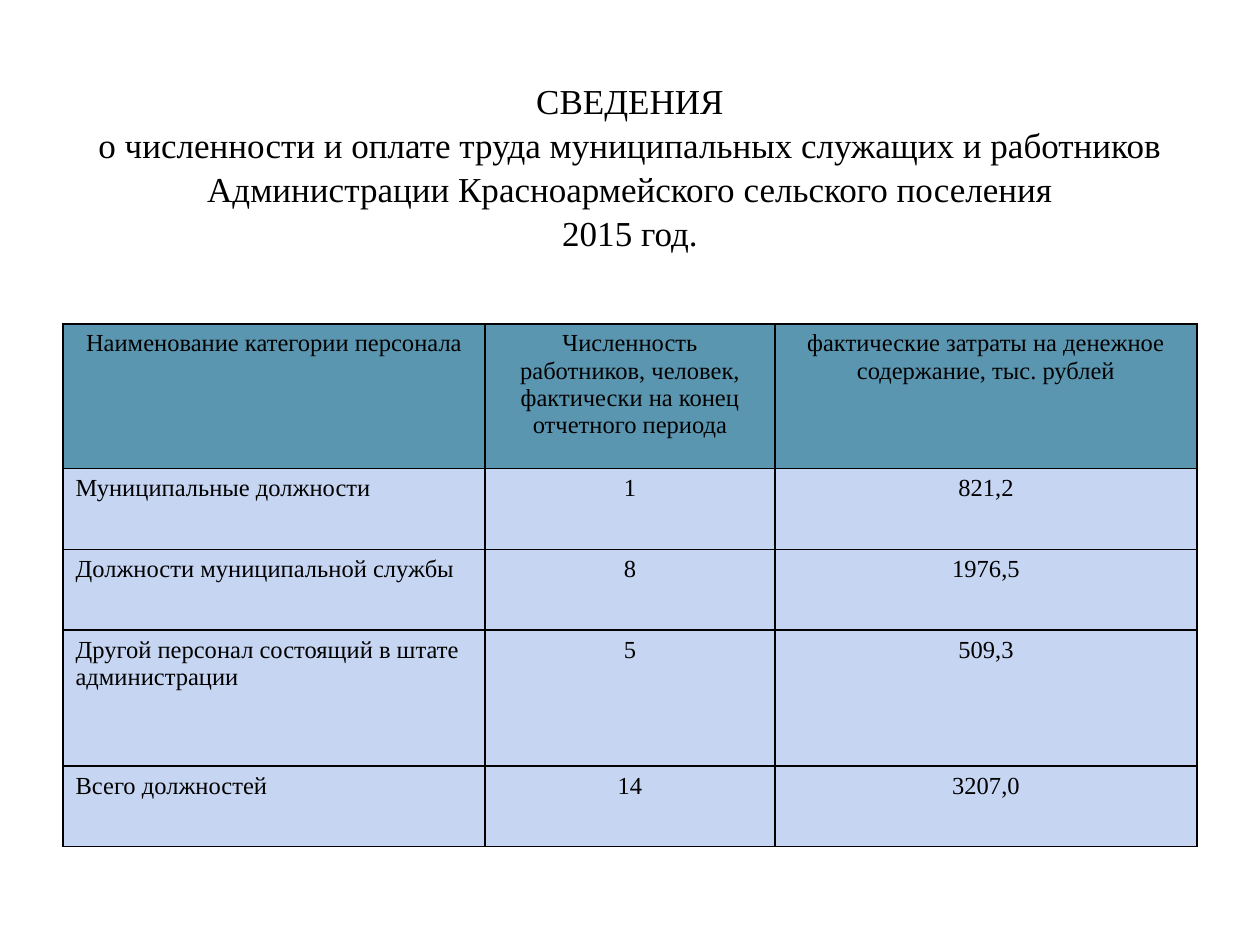
from dataclasses import dataclass

from lxml import etree
from pptx import Presentation
from pptx.dml.color import RGBColor
from pptx.enum import text
from pptx.oxml import ns
from pptx.util import Inches, Pt

FONT = "Times New Roman"
BLACK, HEADER, BODY = "000000", "5B96B1", "C6D5F2"
LEFT, CENTER = text.PP_ALIGN.LEFT, text.PP_ALIGN.CENTER
WIDTH, HEIGHT = 10, 7.5
MARGIN = 0.05 * WIDTH
COLUMNS = (3.35, 2.3, 3.35)


@dataclass
class Row:
    height: float
    cells: tuple[str, ...]
    fill: str = BODY
    first_align: text.PP_ALIGN = LEFT


ROWS = (
    Row(1.15, ("Наименование категории персонала",
               "Численность работников, человек,\nфактически на конец отчетного периода",
               "фактические затраты на денежное содержание, тыс. рублей"), HEADER, CENTER),
    Row(0.64, ("Муниципальные должности", "1", "821,2")),
    Row(0.64, ("Должности муниципальной службы", "8", "1976,5")),
    Row(1.08, ("Другой персонал состоящий в штате администрации", "5", "509,3")),
    Row(0.64, ("Всего должностей", "14", "3207,0")),
)


def color(value: str) -> RGBColor:
    return RGBColor.from_string(value)


def write(tf, content: str, size: float, align) -> None:
    tf.text = content
    for p in tf.paragraphs:
        p.alignment = align
        for r in p.runs:
            r.font.name = FONT
            r.font.size = Pt(size)
            r.font.color.rgb = color(BLACK)


def add_borders(cell) -> None:
    tc_pr = cell._tc.get_or_add_tcPr()
    for side in ("lnL", "lnR", "lnT", "lnB"):
        ln = etree.SubElement(tc_pr, ns.qn(f"a:{side}"), w=str(Pt(1)))
        fill = etree.SubElement(ln, ns.qn("a:solidFill"))
        etree.SubElement(fill, ns.qn("a:srgbClr"), val=BLACK)


def add_title(s) -> None:
    sp = s.shapes.add_textbox(Inches(MARGIN), Inches(0.04 * HEIGHT),
                              Inches(WIDTH - 2 * MARGIN), Inches(0.27 * HEIGHT))
    tf = sp.text_frame
    tf.word_wrap = True
    tf.vertical_anchor = text.MSO_ANCHOR.MIDDLE
    write(tf, "СВЕДЕНИЯ\v"
              "о численности и оплате труда муниципальных служащих и работников "
              "Администрации Красноармейского сельского поселения\v"
              "2015 год.", 20, CENTER)
    tf.paragraphs[0].line_spacing = 1.05


def add_staff_table(s) -> None:
    frame = s.shapes.add_table(len(ROWS), len(COLUMNS), Inches(MARGIN), Inches(2.57),
                               Inches(sum(COLUMNS)), Inches(sum(r.height for r in ROWS)))
    table = frame.table
    for column, width in zip(table.columns, COLUMNS):
        column.width = Inches(width)
    for i, row in enumerate(ROWS):
        table.rows[i].height = Inches(row.height)
        for j, content in enumerate(row.cells):
            cell = table.cell(i, j)
            write(cell.text_frame, content, 14, CENTER if j else row.first_align)
            add_borders(cell)
            cell.fill.solid()
            cell.fill.fore_color.rgb = color(row.fill)


def main() -> None:
    prs = Presentation()
    prs.slide_width, prs.slide_height = Inches(WIDTH), Inches(HEIGHT)
    s = prs.slides.add_slide(prs.slide_layouts[6])
    add_title(s)
    add_staff_table(s)
    prs.save("out.pptx")


if __name__ == "__main__":
    main()
